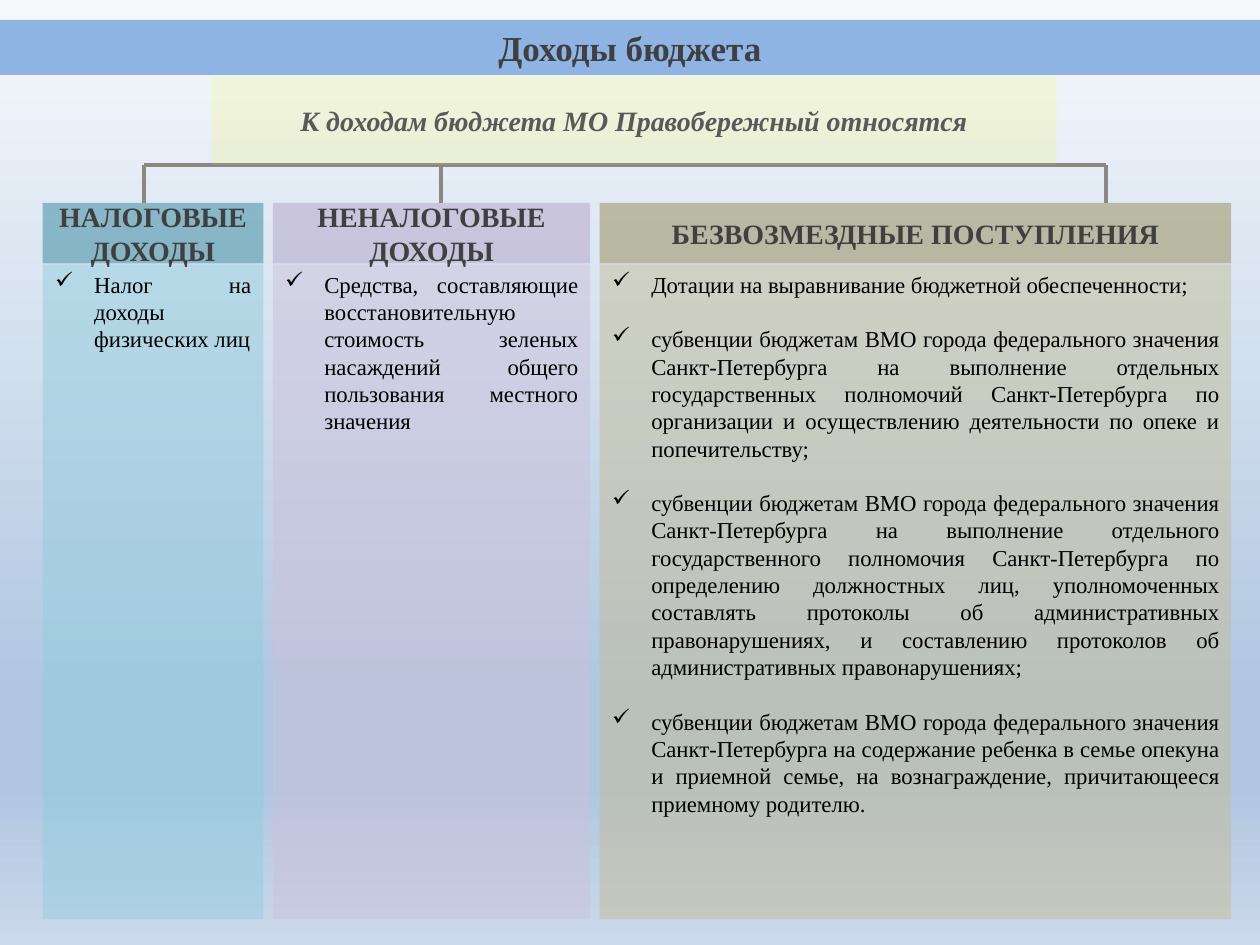
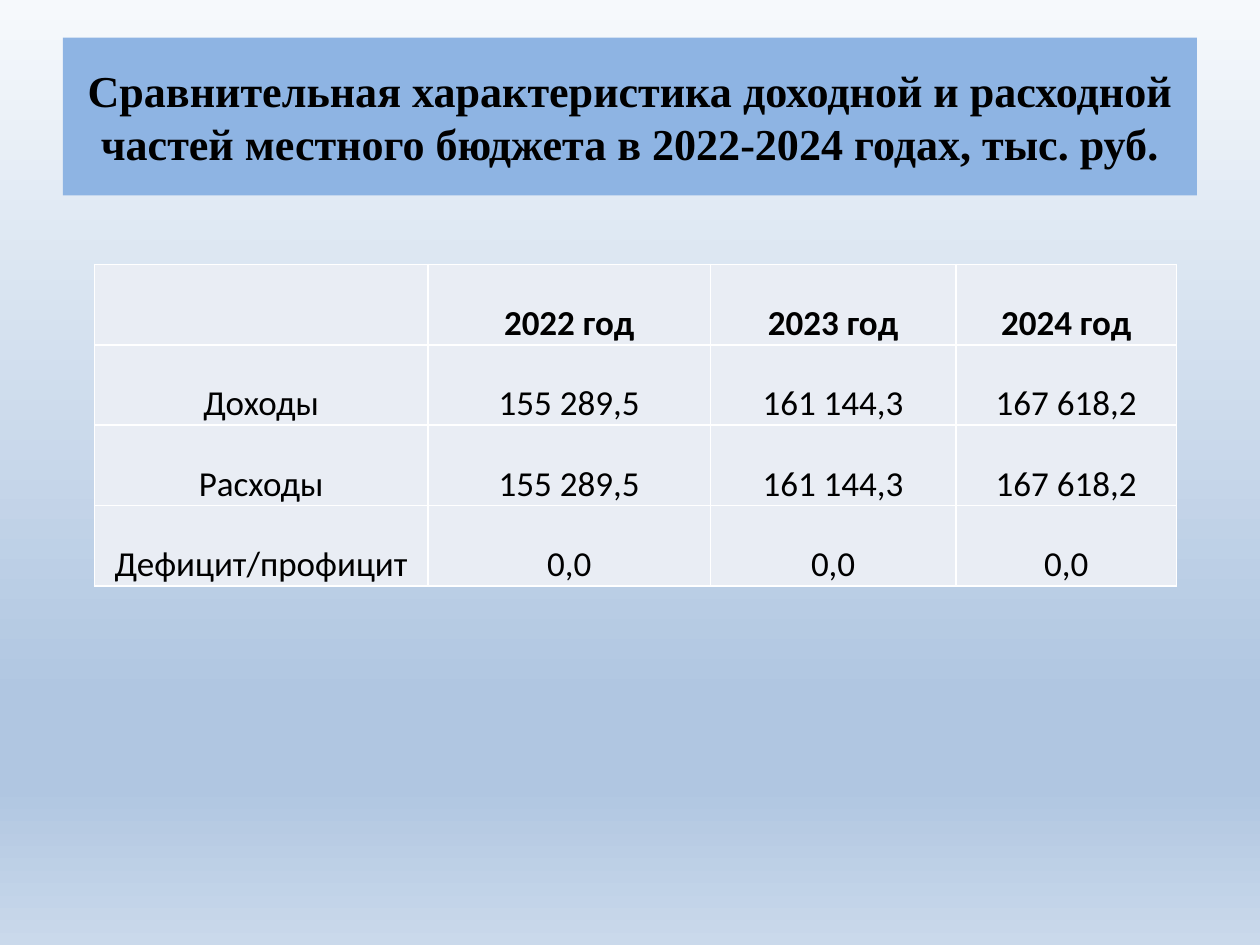
import pptx
import pptx.dml.color
import pptx.enum.shapes
import pptx.enum.text
import pptx.oxml
import pptx.oxml.ns
import pptx.util
import lxml.etree

Cm = pptx.util.Cm
Pt = pptx.util.Pt
RGB = pptx.dml.color.RGBColor
ALIGN = pptx.enum.text.PP_ALIGN
ANCHOR = pptx.enum.text.MSO_ANCHOR
qn = pptx.oxml.ns.qn

BLACK = RGB(0x00, 0x00, 0x00)
WHITE = RGB(0xFF, 0xFF, 0xFF)
DARK_GREY = RGB(0x40, 0x40, 0x40)
MID_GREY = RGB(0x59, 0x59, 0x59)
BRACKET_GREY = RGB(0x8A, 0x88, 0x82)
TITLE_BLUE = RGB(0x8E, 0xB4, 0xE3)
YELLOW = RGB(0xFF, 0xFF, 0x00)
CELL_BLUE = RGB(0xE9, 0xED, 0xF4)
TEAL, LIGHT_TEAL = RGB(0x31, 0x85, 0x9C), RGB(0x93, 0xCD, 0xDD)
PURPLE, LIGHT_PURPLE = RGB(0xB3, 0xA2, 0xC7), RGB(0xCC, 0xC1, 0xDA)
OLIVE, LIGHT_OLIVE = RGB(0x94, 0x8A, 0x54), RGB(0xC4, 0xBD, 0x97)
BACKDROP = [
    (0, RGB(0xF6, 0xF9, 0xFC)),
    (74, RGB(0xB0, 0xC6, 0xE1)),
    (83, RGB(0xB0, 0xC6, 0xE1)),
    (100, RGB(0xCA, 0xD9, 0xEB)),
]
SERIF = "Times New Roman"
SANS = "Calibri"

INCOME_TITLE = "Доходы бюджета"
INCOME_LEAD = "К доходам бюджета МО Правобережный относятся"
INCOME_KINDS = [
    {
        "heading": "НАЛОГОВЫЕ ДОХОДЫ",
        "items": ["Налог на доходы физических лиц"],
        "width": 4.45, "branch": 2.9, "dark": TEAL, "light": LIGHT_TEAL,
    },
    {
        "heading": "НЕНАЛОГОВЫЕ ДОХОДЫ",
        "items": [
            "Средства, составляющие восстановительную стоимость зеленых "
            "насаждений общего пользования местного значения",
        ],
        "width": 6.4, "branch": 8.89, "dark": PURPLE, "light": LIGHT_PURPLE,
    },
    {
        "heading": "БЕЗВОЗМЕЗДНЫЕ ПОСТУПЛЕНИЯ",
        "items": [
            "Дотации на выравнивание бюджетной обеспеченности;",
            "субвенции бюджетам ВМО города федерального значения "
            "Санкт-Петербурга на выполнение отдельных государственных "
            "полномочий Санкт-Петербурга по организации и осуществлению "
            "деятельности по опеке и попечительству;",
            "субвенции бюджетам ВМО города федерального значения "
            "Санкт-Петербурга на выполнение отдельного государственного "
            "полномочия Санкт-Петербурга по определению должностных лиц, "
            "уполномоченных составлять протоколы об административных "
            "правонарушениях, и составлению протоколов об административных "
            "правонарушениях;",
            "субвенции бюджетам ВМО города федерального значения "
            "Санкт-Петербурга на содержание ребенка в семье опекуна и "
            "приемной семье, на вознаграждение, причитающееся приемному "
            "родителю.",
        ],
        "width": 12.73, "branch": 22.3, "dark": OLIVE, "light": LIGHT_OLIVE,
    },
]

COMPARISON_TITLE = (
    "Сравнительная характеристика доходной и расходной "
    "частей местного бюджета в 2022-2024 годах, тыс. руб."
)
COMPARISON = [
    ("", "2022 год", "2023 год", "2024 год"),
    ("Доходы", "155 289,5", "161 144,3", "167 618,2"),
    ("Расходы", "155 289,5", "161 144,3", "167 618,2"),
    ("Дефицит/профицит", "0,0", "0,0", "0,0"),
]
COLUMN_WIDTHS = [6.73, 5.69, 4.95, 4.45]
ROW_HEIGHT = 1.62

KINDS_LEFT, KINDS_GAP = 0.86, 0.19
HEADING_TOP, HEADING_HEIGHT = 4.09, 1.22
PANEL_TOP, PANEL_HEIGHT = 5.33, 13.2
BRACKET_TOP = 3.33


def paint_backdrop(master):
    fill = master.background.fill
    fill.gradient()
    fill.gradient_angle = 270
    stops = master.element.find(".//" + qn("a:gsLst"))
    for stop in list(stops):
        stops.remove(stop)
    for percent, color in BACKDROP:
        stop = lxml.etree.SubElement(stops, qn("a:gs"), pos=str(percent * 1000))
        lxml.etree.SubElement(stop, qn("a:srgbClr"), val=str(color))


def style(paragraph, size, color, font=SERIF, bold=False, italic=False,
          align=ALIGN.CENTER):
    paragraph.alignment = align
    paragraph.font.name = font
    paragraph.font.size = Pt(size)
    paragraph.font.color.rgb = color
    paragraph.font.bold = bold
    paragraph.font.italic = italic


def add_box(slide, box, color, opacity=100):
    shape = slide.shapes.add_shape(
        pptx.enum.shapes.MSO_SHAPE.RECTANGLE, *map(Cm, box))
    shape.shadow.inherit = False
    shape.line.fill.background()
    shape.fill.solid()
    shape.fill.fore_color.rgb = color
    if opacity < 100:
        tint = shape.element.spPr.find(".//" + qn("a:srgbClr"))
        lxml.etree.SubElement(tint, qn("a:alpha"), val=str(opacity * 1000))
    shape.text_frame.word_wrap = True
    return shape


def add_label(slide, box, text, size, color, fill, opacity=100, italic=False):
    frame = add_box(slide, box, fill, opacity).text_frame
    frame.vertical_anchor = ANCHOR.MIDDLE
    frame.text = text
    style(frame.paragraphs[0], size, color, bold=True, italic=italic)


def add_title(slide, box, text, size, color):
    add_label(slide, box, text, size, color, TITLE_BLUE)


def add_checklist(slide, box, items, fill):
    frame = add_box(slide, box, fill, 50).text_frame
    frame.vertical_anchor = ANCHOR.TOP
    frame.text = "\n".join(items)
    for paragraph in frame.paragraphs:
        properties = paragraph._p.get_or_add_pPr()
        properties.set("marL", str(Cm(0.79)))
        properties.set("indent", str(-Cm(0.79)))
        lxml.etree.SubElement(properties, qn("a:buChar"), char="✓")
        style(paragraph, 13, BLACK, align=ALIGN.JUSTIFY)
        paragraph.space_after = Pt(15.5)


def add_bracket_line(slide, *ends):
    line = slide.shapes.add_connector(
        pptx.enum.shapes.MSO_CONNECTOR.STRAIGHT, *map(Cm, ends))
    line.line.color.rgb = BRACKET_GREY
    line.line.width = Pt(2.25)
    lxml.etree.SubElement(line.element.spPr, qn("a:effectLst"))


def add_borders(cell):
    properties = cell._tc.get_or_add_tcPr()
    for position, side in enumerate(("a:lnL", "a:lnR", "a:lnT", "a:lnB")):
        border = pptx.oxml.ns.qn(side)
        line = lxml.etree.Element(border, w=str(Pt(1)))
        fill = lxml.etree.SubElement(line, qn("a:solidFill"))
        lxml.etree.SubElement(fill, qn("a:srgbClr"), val=str(WHITE))
        properties.insert(position, line)


def build_income(slide):
    left = KINDS_LEFT
    for kind in INCOME_KINDS:
        width = kind["width"]
        add_checklist(slide, (left, PANEL_TOP, width, PANEL_HEIGHT),
                      kind["items"], kind["light"])
        add_label(slide, (left, HEADING_TOP, width, HEADING_HEIGHT),
                  kind["heading"], 16, DARK_GREY, kind["dark"], 50)
        add_bracket_line(slide, kind["branch"], BRACKET_TOP,
                         kind["branch"], HEADING_TOP)
        left += width + KINDS_GAP
    add_bracket_line(slide, INCOME_KINDS[0]["branch"], BRACKET_TOP,
                     INCOME_KINDS[-1]["branch"], BRACKET_TOP)
    add_title(slide, (0, 0.4, 25.4, 1.11), INCOME_TITLE, 20, DARK_GREY)
    add_label(slide, (4.27, 1.52, 17.02, 1.8), INCOME_LEAD, 16, MID_GREY,
              YELLOW, 12, italic=True)


def build_comparison(slide):
    add_title(slide, (1.27, 0.76, 22.86, 3.18), COMPARISON_TITLE, 25.2, BLACK)
    table = slide.shapes.add_table(
        len(COMPARISON), len(COLUMN_WIDTHS), Cm(1.9), Cm(5.33),
        Cm(sum(COLUMN_WIDTHS)), Cm(ROW_HEIGHT * len(COMPARISON))).table
    table.first_row = table.horz_banding = False
    for column, width in zip(table.columns, COLUMN_WIDTHS):
        column.width = Cm(width)
    for r, row in enumerate(COMPARISON):
        for c, text in enumerate(row):
            cell = table.cell(r, c)
            cell.fill.solid()
            cell.fill.fore_color.rgb = CELL_BLUE
            cell.margin_left = cell.margin_right = cell.margin_top = Cm(0.02)
            cell.margin_bottom = 0
            cell.vertical_anchor = ANCHOR.BOTTOM
            cell.text = text
            style(cell.text_frame.paragraphs[0], 20, BLACK, SANS, bold=r == 0)
            add_borders(cell)


def main():
    deck = pptx.Presentation()
    deck.slide_width, deck.slide_height = Cm(25.4), Cm(19.05)
    paint_backdrop(deck.slide_master)
    for build in (build_income, build_comparison):
        build(deck.slides.add_slide(deck.slide_layouts[6]))
    deck.save("out.pptx")


if __name__ == "__main__":
    main()
